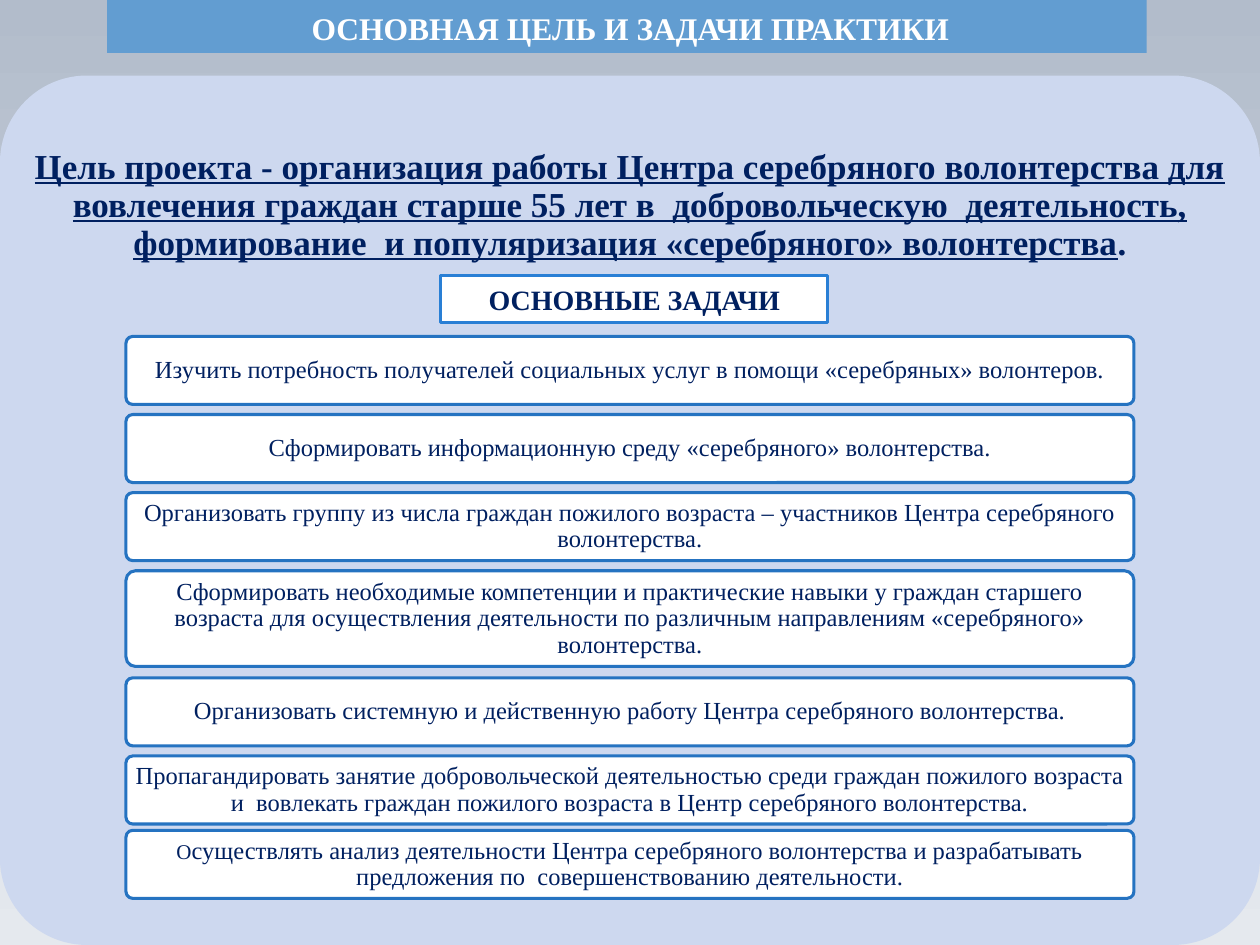
from dataclasses import dataclass

from pptx import Presentation
from pptx.dml.color import RGBColor
from pptx.enum.shapes import MSO_SHAPE
from pptx.enum.text import MSO_ANCHOR, PP_ALIGN
from pptx.util import Inches, Pt

RECTANGLE = MSO_SHAPE.RECTANGLE
ROUNDED = MSO_SHAPE.ROUNDED_RECTANGLE
MIDDLE = MSO_ANCHOR.MIDDLE
CENTER = PP_ALIGN.CENTER
TITLE_ONLY = 5


@dataclass(frozen=True)
class Theme:
    font: str = "Times New Roman"
    background: tuple = ("B2BCCB", "E5E9EE")
    bar: str = "629DD1"
    panel: str = "CDD8EF"
    white: str = "FFFFFF"
    navy: str = "002060"
    task_line: str = "2573C1"
    label_line: str = "297FD5"
    line_width: float = 1.75
    title_size: int = 18
    goal_size: int = 20
    label_size: int = 16
    task_size: int = 14
    small_size: int = 12


@dataclass(frozen=True)
class Task:
    text: str
    height: float = 0.54
    gap: float = 0.08
    small_start: str = ""


THEME = Theme()
TASKS_TOP = 2.67
GOAL = (
    "Цель проекта - организация работы Центра серебряного волонтерства для "
    "вовлечения граждан старше 55 лет в  добровольческую  деятельность, "
    "формирование  и популяризация «серебряного» волонтерства"
)
TASKS = [
    Task("Изучить потребность получателей социальных услуг в помощи "
         "«серебряных» волонтеров."),
    Task("Сформировать информационную среду «серебряного» волонтерства."),
    Task("Организовать группу из числа граждан пожилого возраста – "
         "участников Центра серебряного волонтерства."),
    Task("Сформировать необходимые компетенции и практические навыки у граждан "
         "старшего возраста для осуществления деятельности по различным "
         "направлениям «серебряного» волонтерства.", height=0.76, gap=0.09),
    Task("Организовать системную и действенную работу Центра серебряного "
         "волонтерства."),
    Task("Пропагандировать занятие добровольческой деятельностью среди граждан "
         "пожилого возраста и  вовлекать граждан пожилого возраста в Центр "
         "серебряного волонтерства.", gap=0.05),
    Task("существлять анализ деятельности Центра серебряного волонтерства и "
         "разрабатывать предложения по  совершенствованию деятельности.",
         small_start="О"),
]


def color(value):
    return RGBColor.from_string(value)


def add_box(page, kind, bounds, fill, line=None):
    box = page.shapes.add_shape(kind, *map(Inches, bounds))
    box.shadow.inherit = False
    box.fill.solid()
    box.fill.fore_color.rgb = color(fill)
    if line:
        box.line.color.rgb = color(line)
        box.line.width = Pt(THEME.line_width)
    else:
        box.line.fill.background()
    if kind == ROUNDED:
        box.adjustments[0] = 0.1
    return box


def write(box, texts, size, ink, bold=False, spacing=1.0, insets=None):
    """Fill the box with one centred paragraph and return its spans."""
    frame = box.text_frame
    frame.word_wrap = True
    frame.vertical_anchor = MIDDLE
    if insets:
        side, end = map(Inches, insets)
        frame.margin_left = frame.margin_right = side
        frame.margin_top = frame.margin_bottom = end
    para = frame.paragraphs[0]
    para.alignment = CENTER
    para.line_spacing = spacing
    para.font.name = THEME.font
    para.font.size = Pt(size)
    para.font.bold = bold
    para.font.color.rgb = color(ink)
    spans = []
    for text in texts:
        span = para.add_run()
        span.text = text
        spans.append(span)
    return spans


def paint_background(page):
    fill = page.background.fill
    fill.gradient()
    fill.gradient_angle = 270
    for stop, value in zip(fill.gradient_stops, THEME.background):
        stop.color.rgb = color(value)


def add_title(page, text):
    bar = add_box(page, RECTANGLE, (0.85, 0, 8.25, 0.42), THEME.bar)
    title = page.shapes.title
    title.left, title.top, title.width, title.height = map(
        Inches, (0.91, 0, 8.19, 0.44))
    write(title, [text], THEME.title_size, THEME.white, bold=True)
    title._element.addprevious(bar._element)


def add_goal(page):
    add_box(page, ROUNDED, (0, 0.6, 10, 6.9), THEME.panel)
    box = page.shapes.add_textbox(*map(Inches, (0, 0.6, 10, 2.07)))
    goal, _ = write(box, [GOAL, "."], THEME.goal_size, THEME.navy,
                    bold=True, spacing=0.9, insets=(0.08, 0.08))
    goal.font.underline = True


def add_tasks(page):
    top = TASKS_TOP
    for task in TASKS:
        box = add_box(page, ROUNDED, (1, top, 8, task.height),
                      THEME.white, THEME.task_line)
        texts = [text for text in (task.small_start, task.text) if text]
        spans = write(box, texts, THEME.task_size, THEME.navy,
                      spacing=0.9, insets=(0.04, 0.03))
        if task.small_start:
            spans[0].font.size = Pt(THEME.small_size)
        top += task.height + task.gap


def add_label(page, text):
    box = add_box(page, RECTANGLE, (3.5, 2.19, 3.07, 0.37),
                  THEME.white, THEME.label_line)
    write(box, [text], THEME.label_size, THEME.navy, bold=True)


def main():
    deck = Presentation()
    deck.slide_width, deck.slide_height = Inches(10), Inches(7.5)
    page = deck.slides.add_slide(deck.slide_layouts[TITLE_ONLY])
    paint_background(page)
    add_title(page, "ОСНОВНАЯ ЦЕЛЬ И ЗАДАЧИ ПРАКТИКИ")
    add_goal(page)
    add_tasks(page)
    add_label(page, "ОСНОВНЫЕ ЗАДАЧИ")
    deck.save("out.pptx")


if __name__ == "__main__":
    main()
